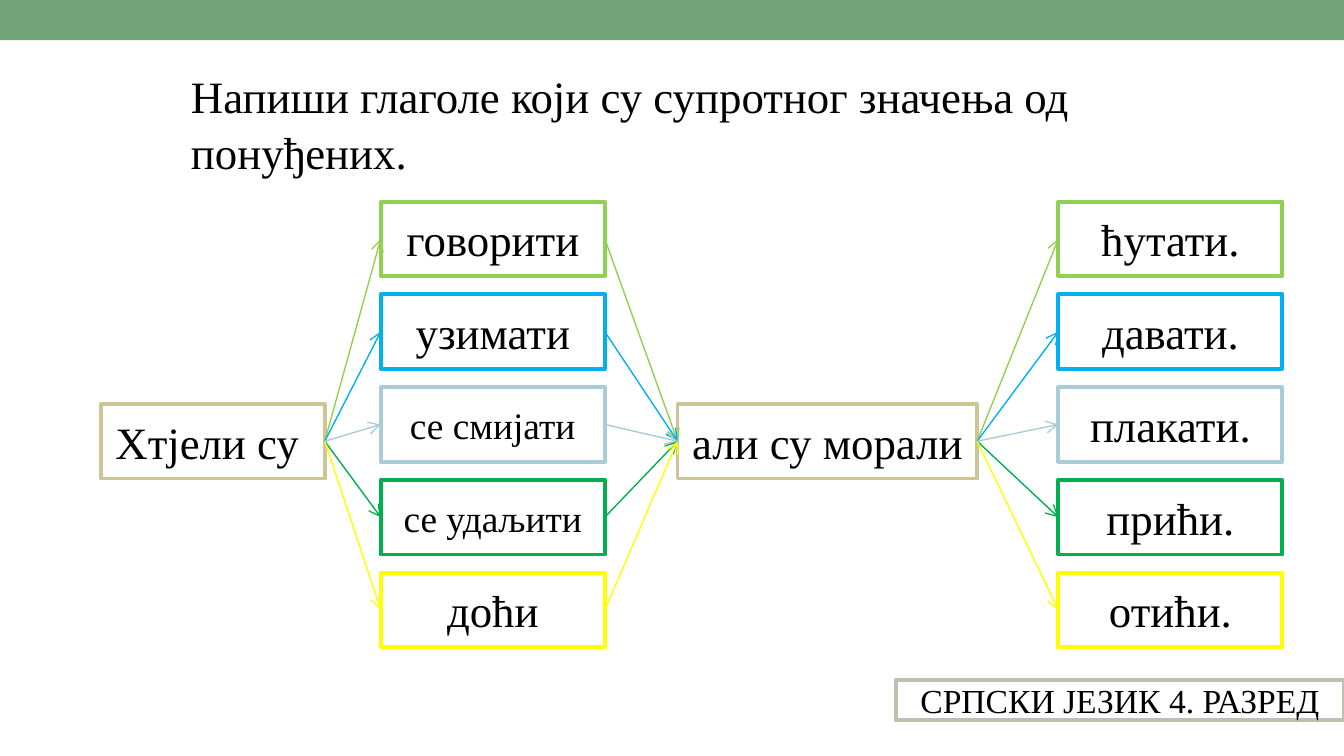
from lxml import etree
from pptx import Presentation
from pptx.dml.color import RGBColor
from pptx.enum.shapes import MSO_CONNECTOR, MSO_SHAPE
from pptx.enum.text import MSO_ANCHOR, MSO_AUTO_SIZE, PP_ALIGN
from pptx.oxml.ns import qn
from pptx.util import Pt

RECT, LINE = MSO_SHAPE.RECTANGLE, MSO_CONNECTOR.STRAIGHT
TOP, MIDDLE = MSO_ANCHOR.TOP, MSO_ANCHOR.MIDDLE
LEFT, CENTER = PP_ALIGN.LEFT, PP_ALIGN.CENTER
NO_FIT = MSO_AUTO_SIZE.NONE

FACE = "Times New Roman"
HUES = ["92D050", "00B0F0", "A8CDD7", "00B050", "FFFF00"]
SAND = "CEC597"
VERBS = ["говорити", "узимати", "се смијати", "се удаљити", "доћи"]
SIZES = [24, 24, 20, 20, 24]
PAIRS = ["ћутати.", "давати.", "плакати.", "прићи.", "отићи."]
WIDE, HIGH, STEP = 120, 40, 49.7
RIGHT_SIDE, LEFT_SIDE = 3, 1


def color(code):
    return RGBColor.from_string(code)


def apply(item, values):
    for name, value in values.items():
        setattr(item, name, value)


def style(para, size):
    apply(para.font, {"name": FACE, "size": Pt(size)})
    para.font.color.rgb = color("000000")


def place(item, box):
    names = ("left", "top", "width", "height")
    apply(item, dict(zip(names, map(Pt, box))))


def add_bar(slide, box):
    bar = slide.shapes.add_shape(RECT, *map(Pt, box))
    bar.shadow.inherit = False
    bar.fill.solid()
    bar.fill.fore_color.rgb = color("72A376")
    bar.line.fill.background()


def add_task(slide, box, text):
    body = slide.placeholders[1]
    place(body, box)
    frame = body.text_frame
    apply(frame, {"word_wrap": True, "auto_size": NO_FIT,
                  "vertical_anchor": TOP})
    frame.text = text
    para = frame.paragraphs[0]
    props = para._p.get_or_add_pPr()
    apply(para, {"alignment": LEFT, "line_spacing": 1.05,
                 "space_before": Pt(0)})
    props.set("marL", str(Pt(3.6)))
    props.set("indent", "0")
    etree.SubElement(props, qn("a:buNone"))
    style(para, 24)


def add_card(slide, box, text, hue, size=24):
    card = slide.shapes.add_shape(RECT, *map(Pt, box))
    card.shadow.inherit = False
    card.fill.solid()
    card.fill.fore_color.rgb = color("FFFFFF")
    card.line.color.rgb = color(hue)
    card.line.width = Pt(2.08)
    frame = card.text_frame
    apply(frame, {"word_wrap": True, "vertical_anchor": MIDDLE,
                  "margin_left": Pt(4), "margin_right": Pt(4),
                  "margin_top": 0, "margin_bottom": 0})
    frame.text = text
    para = frame.paragraphs[0]
    para.alignment = CENTER
    style(para, size)
    return card


def add_column(slide, left, top, words, sizes):
    return [add_card(slide, (left, top + i * STEP, WIDE, HIGH), word, hue, size)
            for i, (word, hue, size) in enumerate(zip(words, HUES, sizes))]


def add_arrow(slide, start, end, hue):
    """Join the right side of one card to the left side of another."""
    arrow = slide.shapes.add_connector(LINE, 0, 0, 0, 0)
    arrow.begin_connect(start, RIGHT_SIDE)
    arrow.end_connect(end, LEFT_SIDE)
    arrow.line.color.rgb = color(hue)
    arrow.line.width = Pt(0.75)
    etree.SubElement(arrow.line._get_or_add_ln(), qn("a:tailEnd"), type="arrow")
    etree.SubElement(arrow._element.spPr, qn("a:effectLst"))


def add_scheme(slide, left, top):
    """Two hub cards, each fanning out to a column of verbs."""
    mid = top + 2 * STEP + 9
    first = add_card(slide, (left, mid, WIDE, HIGH), "Хтјели су ", SAND)
    verbs = add_column(slide, left + 150, top, VERBS, SIZES)
    second = add_card(slide, (left + 309, mid, 160.5, HIGH),
                      "али су морали", SAND)
    pairs = add_column(slide, left + 513, top, PAIRS, [24] * len(PAIRS))
    for verb, pair, hue in zip(verbs, pairs, HUES):
        for start, end in ((first, verb), (verb, second), (second, pair)):
            add_arrow(slide, start, end, hue)


def main():
    deck = Presentation()
    deck.slide_width, deck.slide_height = Pt(720), Pt(405)
    slide = deck.slides.add_slide(deck.slide_layouts[1])
    title = slide.shapes.title._element
    title.getparent().remove(title)
    add_bar(slide, (0, 0, 720, 21.6))
    add_task(slide, (91.5, 31.7, 504, 65),
             "Напиши глаголе који су супротног значења од понуђених.")
    add_scheme(slide, 54, 108)
    add_card(slide, (480, 364.5, 240, 21.5), "СРПСКИ ЈЕЗИК 4. РАЗРЕД",
             "C0BEAF", 18)
    deck.save("out.pptx")


if __name__ == "__main__":
    main()
